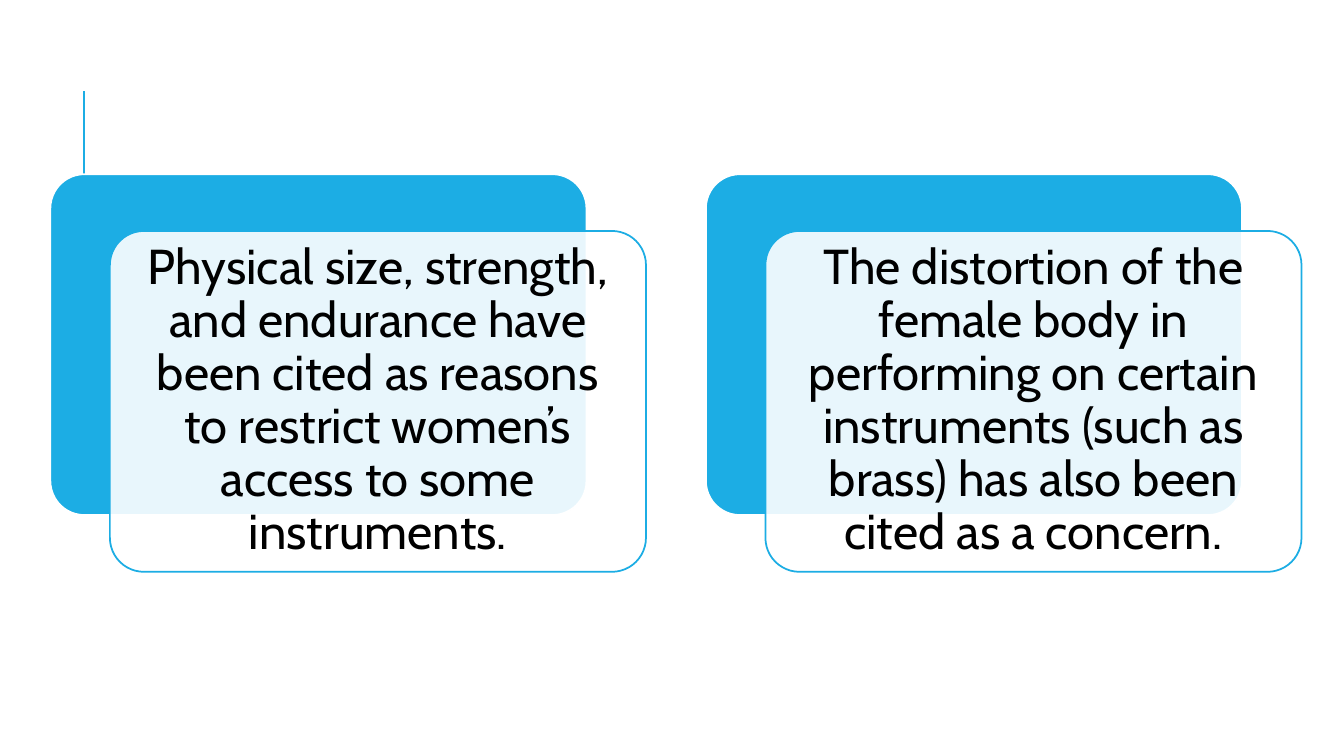
from dataclasses import dataclass

from lxml.etree import SubElement
from pptx import Presentation
from pptx.dml.color import RGBColor
from pptx.enum.shapes import MSO_CONNECTOR as Connector, MSO_SHAPE as Shape
from pptx.enum.text import MSO_ANCHOR as Anchor, PP_ALIGN as Align
from pptx.oxml.ns import qn
from pptx.util import Cm, Pt


@dataclass(frozen=True)
class Theme:
    accent: RGBColor = RGBColor(0x1C, 0xAD, 0xE4)
    paper: RGBColor = RGBColor(0xFF, 0xFF, 0xFF)
    ink: RGBColor = RGBColor(0, 0, 0)
    font: str = "Cabin"
    text_size: Pt = Pt(35)
    outline: Pt = Pt(1.25)
    rule: Pt = Pt(1.5)


THEME = Theme()

REASONS = [
    "Physical size, strength, and endurance have been cited as reasons "
    "to restrict women’s access to some instruments.",
    "The distortion of the female body in performing on certain instruments "
    "(such as brass) has also been cited as a concern.",
]

# Card geometry
CARD_WIDTH, CARD_HEIGHT = Cm(13.51), Cm(8.59)
FIRST_LEFT, CARD_TOP = Cm(1.27), Cm(4.39)
CARD_PITCH = Cm(16.52)
FRONT_SHIFT_X, FRONT_SHIFT_Y = Cm(1.5), Cm(1.43)
TEXT_INSET = Cm(0.38)


def add_rule(slide, x, top, bottom):
    """Vertical accent line."""
    rule = slide.shapes.add_connector(Connector.STRAIGHT, x, bottom, x, top)
    rule.line.color.rgb = THEME.accent
    rule.line.width = THEME.rule
    SubElement(rule._element.spPr, qn("a:effectLst"))


def add_panel(slide, left, top, fill, outline):
    """Rounded rectangle without shadow."""
    panel = slide.shapes.add_shape(
        Shape.ROUNDED_RECTANGLE, left, top, CARD_WIDTH, CARD_HEIGHT)
    panel.adjustments[0] = 0.1
    panel.shadow.inherit = False
    panel.fill.solid()
    panel.fill.fore_color.rgb = fill
    panel.line.color.rgb = outline
    panel.line.width = THEME.outline
    return panel


def set_opacity(panel, percent):
    color = panel._element.spPr.find(qn("a:solidFill"))[0]
    SubElement(color, qn("a:alpha"), val=str(percent * 1000))


def write_reason(panel, reason):
    frame = panel.text_frame
    frame.word_wrap = True
    frame.vertical_anchor = Anchor.MIDDLE
    frame.margin_left = frame.margin_right = TEXT_INSET
    frame.margin_top = frame.margin_bottom = TEXT_INSET
    paragraph = frame.paragraphs[0]
    paragraph.text = reason
    paragraph.alignment = Align.CENTER
    paragraph.line_spacing = 0.9
    paragraph.font.name = THEME.font
    paragraph.font.size = THEME.text_size
    paragraph.font.color.rgb = THEME.ink


def add_reason_card(slide, left, reason):
    """Solid back panel with a translucent text panel shifted over it."""
    add_panel(slide, left, CARD_TOP, THEME.accent, THEME.paper)
    front = add_panel(slide, left + FRONT_SHIFT_X, CARD_TOP + FRONT_SHIFT_Y,
                      THEME.paper, THEME.accent)
    set_opacity(front, 90)
    write_reason(front, reason)


def main():
    deck = Presentation()
    deck.slide_width, deck.slide_height = Cm(33.87), Cm(19.05)
    blank_layout = deck.slide_layouts[6]
    slide = deck.slides.add_slide(blank_layout)

    # Accent line above the cards
    add_rule(slide, Cm(2.12), Cm(2.29), Cm(4.83))

    # One card per reason
    for index, reason in enumerate(REASONS):
        add_reason_card(slide, FIRST_LEFT + index * CARD_PITCH, reason)

    deck.save("out.pptx")


if __name__ == "__main__":
    main()
